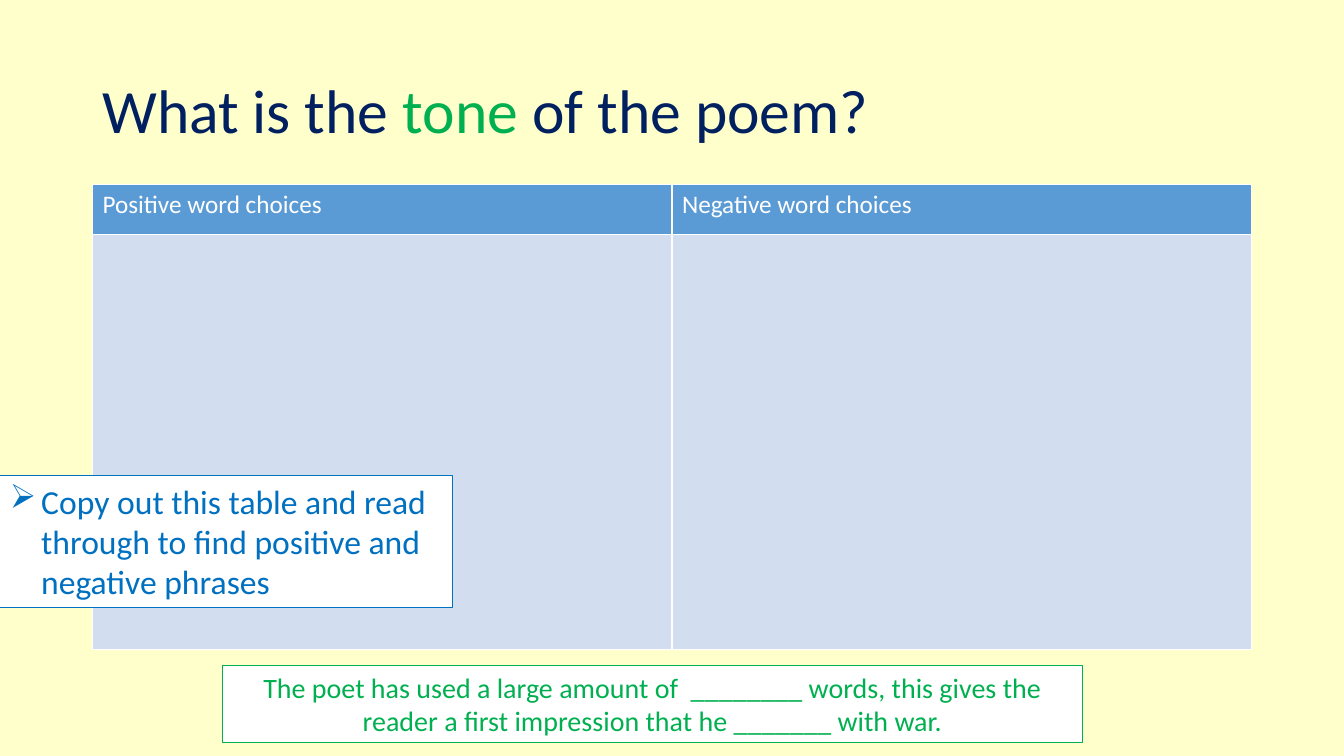
from dataclasses import dataclass

import pptx
import pptx.dml.color
import pptx.enum.shapes
import pptx.enum.text
import pptx.oxml
import pptx.oxml.ns
import pptx.util
from pptx.util import Cm, Pt

FONT = "Calibri"
NAVY, GREEN, BLUE, WHITE = "002060", "00B050", "0070C0", "FFFFFF"
HEADER_FILL, BODY_FILL, CREAM = "5B9BD5", "D2DEEF", "FFFFCC"
HEADINGS = ["Positive word choices", "Negative word choices"]
ALIGN = pptx.enum.text.PP_ALIGN
ANCHOR = pptx.enum.text.MSO_ANCHOR


@dataclass
class Run:
    text: str
    color: str


@dataclass
class Note:
    left: float
    top: float
    width: float
    height: float
    text: str
    size: float
    color: str
    align: ALIGN = ALIGN.LEFT
    bullet: str = ""


TITLE = [Run("What is the ", NAVY), Run("tone", GREEN), Run(" of the poem?", NAVY)]
NOTES = [
    Note(5.61, 16.76, 21.67, 1.96,
         "The poet has used a large amount of  ________ words, this gives the "
         "reader a first impression that he _______ with war.",
         20, GREEN, align=ALIGN.CENTER),
    Note(0, 11.99, 11.4, 3.33,
         "Copy out this table and read through to find positive and negative phrases",
         24, BLUE, bullet="➢"),
]


def rgb(color: str) -> pptx.dml.color.RGBColor:
    return pptx.dml.color.RGBColor.from_string(color)


def paint(fill, color: str) -> None:
    fill.solid()
    fill.fore_color.rgb = rgb(color)


def add_run(p, run: Run, size: float) -> None:
    r = p.add_run()
    r.text = run.text
    r.font.name = FONT
    r.font.size = Pt(size)
    r.font.bold = False
    r.font.color.rgb = rgb(run.color)


def add_bullet(p, char: str) -> None:
    pPr = p._p.get_or_add_pPr()
    indent = Cm(0.79)
    pPr.set("marL", str(indent))
    pPr.set("indent", str(-indent))
    pPr.append(pptx.oxml.parse_xml(
        f'<a:buChar {pptx.oxml.ns.nsdecls("a")} char="{char}"/>'))


def add_borders(cell, color: str, width: float) -> None:
    tcPr = cell._tc.get_or_add_tcPr()
    for side in "LRTB":
        tcPr.append(pptx.oxml.parse_xml(
            f'<a:ln{side} {pptx.oxml.ns.nsdecls("a")} w="{Pt(width)}">'
            f'<a:solidFill><a:srgbClr val="{color}"/></a:solidFill></a:ln{side}>'))


def add_title(s) -> None:
    sp = s.shapes.add_textbox(Cm(2.33), Cm(1.01), Cm(29.21), Cm(3.68))
    tf = sp.text_frame
    tf.word_wrap = True
    tf.vertical_anchor = ANCHOR.MIDDLE
    p = tf.paragraphs[0]
    p.line_spacing = 0.9
    for run in TITLE:
        add_run(p, run, 44)


def add_word_table(s) -> None:
    frame = s.shapes.add_table(2, len(HEADINGS), Cm(2.33), Cm(4.65), Cm(29.21), Cm(11.71))
    table = frame.table
    for row, height in zip(table.rows, (1.25, 10.46)):
        row.height = Cm(height)
    for column, heading in enumerate(HEADINGS):
        for row, fill in enumerate((HEADER_FILL, BODY_FILL)):
            cell = table.cell(row, column)
            add_borders(cell, WHITE, 1)
            paint(cell.fill, fill)
        add_run(table.cell(0, column).text_frame.paragraphs[0], Run(heading, WHITE), 18)


def add_note(s, note: Note) -> None:
    sp = s.shapes.add_shape(
        pptx.enum.shapes.MSO_SHAPE.RECTANGLE,
        Cm(note.left), Cm(note.top), Cm(note.width), Cm(note.height))
    sp.shadow.inherit = False
    paint(sp.fill, WHITE)
    sp.line.color.rgb = rgb(note.color)
    sp.line.width = Pt(0.75)
    tf = sp.text_frame
    tf.word_wrap = True
    tf.auto_size = pptx.enum.text.MSO_AUTO_SIZE.SHAPE_TO_FIT_TEXT
    tf.vertical_anchor = ANCHOR.TOP
    p = tf.paragraphs[0]
    p.alignment = note.align
    if note.bullet:
        add_bullet(p, note.bullet)
    add_run(p, Run(note.text, note.color), note.size)


def main() -> None:
    prs = pptx.Presentation()
    prs.slide_width, prs.slide_height = Cm(33.87), Cm(19.05)
    s = prs.slides.add_slide(prs.slide_layouts[6])
    paint(s.background.fill, CREAM)
    add_title(s)
    add_word_table(s)
    for note in NOTES:
        add_note(s, note)
    prs.save("out.pptx")


if __name__ == "__main__":
    main()
